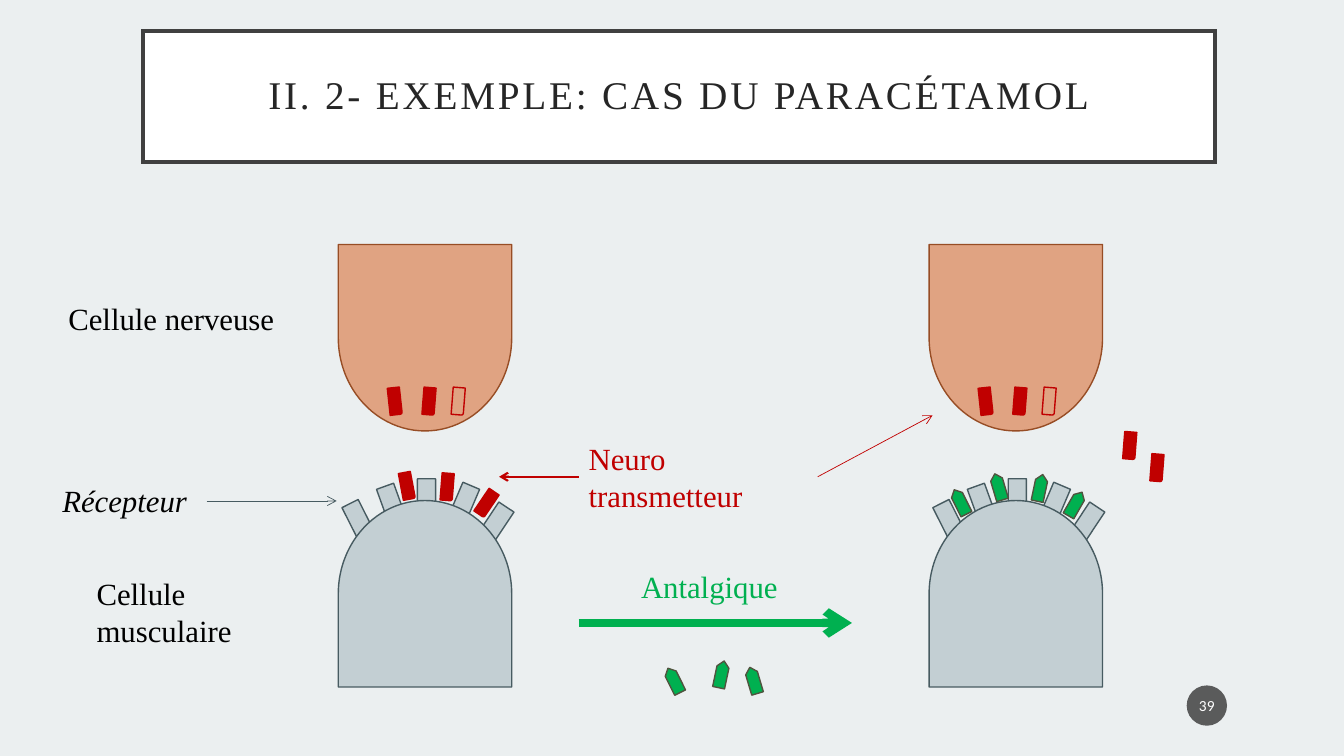
from dataclasses import dataclass

from lxml import etree
from pptx import Presentation
from pptx.dml.color import RGBColor
from pptx.enum.shapes import MSO_CONNECTOR, MSO_SHAPE
from pptx.enum.text import MSO_ANCHOR, MSO_AUTO_SIZE, PP_ALIGN
from pptx.oxml.ns import qn
from pptx.util import Inches, Pt

CELL = MSO_SHAPE.FLOWCHART_DELAY
PLATE = MSO_SHAPE.PENTAGON
ROUND = MSO_SHAPE.ROUND_1_RECTANGLE
ELLIPSE = MSO_SHAPE.OVAL
STRAIGHT = MSO_CONNECTOR.STRAIGHT
MIDDLE = MSO_ANCHOR.MIDDLE
CENTER = PP_ALIGN.CENTER
NO_FIT = MSO_AUTO_SIZE.NONE

COLORS = {
    "page": "EBEFF0", "white": "FFFFFF", "black": "000000",
    "frame": "404040", "title": "262626", "badge": "1D1D1D",
    "nerve": "E0A382", "nerve_edge": "974D25",
    "muscle": "C3CFD3", "muscle_edge": "475B61",
    "transmitter": "C00000", "drug": "00B050", "drug_edge": "50543F",
}
SERIF = "Times New Roman"


@dataclass(frozen=True)
class Style:
    preset: int
    width: float
    height: float
    fill: str | None
    edge: str


@dataclass(frozen=True)
class Spot:
    left: float
    top: float
    turn: float


@dataclass(frozen=True)
class Label:
    text: str
    left: float
    top: float
    width: float
    height: float
    color: str = "black"
    italic: bool = False


@dataclass(frozen=True)
class Arrow:
    start: tuple[float, float]
    end: tuple[float, float]
    color: str
    weight: float


NERVE = Style(CELL, 1.85, 1.72, "nerve", "nerve_edge")
MUSCLE = Style(CELL, 1.85, 1.72, "muscle", "muscle_edge")
RECEPTOR = Style(PLATE, 0.48, 0.18, "muscle", "muscle_edge")
TRANSMITTER = Style(ROUND, 0.27, 0.12, "transmitter", "transmitter")
EMPTY_SITE = Style(ROUND, 0.27, 0.12, None, "transmitter")
DRUG = Style(PLATE, 0.27, 0.12, "drug", "drug_edge")

# Parts shared by both synapses, placed for the left one
SYNAPSE = [
    (NERVE, [Spot(3.29, 2.49, 90)]),
    (RECEPTOR, [Spot(3.34, 5.12, 63.2), Spot(4.65, 5.14, 123.6), Spot(3.99, 4.9, 90),
                Spot(4.34, 4.95, 113.1), Spot(3.66, 4.96, 70.2)]),
    (MUSCLE, [Spot(3.29, 5.03, 270)]),
    (TRANSMITTER, [Spot(4.12, 3.92, 94.5), Spot(3.78, 3.92, 83.8)]),
    (EMPTY_SITE, [Spot(4.41, 3.92, 94.5)]),
]
SYNAPSE_SHIFTS = (0, 5.86)

# Molecules bound to receptors or floating free
MOLECULES = [
    (TRANSMITTER, [Spot(4.3, 4.77, 94.5), Spot(3.9, 4.76, 79.3), Spot(4.69, 4.93, 124.1),
                   Spot(11.07, 4.36, 94.5), Spot(11.34, 4.58, 94.5)]),
    (DRUG, [Spot(9.39, 4.92, 243.5), Spot(10.53, 4.94, 299.9), Spot(10.18, 4.78, 281.9),
            Spot(9.77, 4.77, 253.5), Spot(6.55, 6.69, 243.5), Spot(7.02, 6.63, 281.9),
            Spot(7.34, 6.69, 253.5)]),
]

LABELS = [
    Label("Cellule nerveuse", 0.58, 2.92, 2.37, 0.47),
    Label("Cellule musculaire", 0.86, 5.65, 2.37, 0.84),
    Label("Récepteur", 0.52, 4.73, 2.37, 0.47, italic=True),
    Label("Antalgique", 6.26, 5.58, 1.66, 0.47, "drug"),
]
NEURO = Label("Neuro transmetteur", 5.74, 4.31, 1.83, 0.84, "transmitter")

ARROWS = [
    Arrow((2.05, 4.97), (3.34, 4.97), "muscle_edge", 0.5),
    Arrow((8.11, 4.73), (9.25, 4.12), "transmitter", 0.5),
    Arrow((5.74, 6.18), (8.45, 6.18), "drug", 6),
]
NEURO_ARROW = Arrow((5.74, 4.73), (4.95, 4.73), "transmitter", 1.5)


def rgb(name: str) -> RGBColor:
    return RGBColor.from_string(COLORS[name])


def set_all(target, values: dict) -> None:
    for name, value in values.items():
        setattr(target, name, value)


def write(box, text: str, size: float, color: str, font: str = SERIF, italic: bool = False):
    """Put one formatted run in a box and return it."""
    span = box.text_frame.paragraphs[0].add_run()
    span.text = text
    set_all(span.font, {"name": font, "size": Pt(size), "italic": italic, "bold": False})
    span.font.color.rgb = rgb(color)
    return span


def draw_part(page, style: Style, spot: Spot, shift: float = 0) -> None:
    part = page.shapes.add_shape(style.preset, Inches(spot.left + shift), Inches(spot.top),
                                 Inches(style.width), Inches(style.height))
    part.rotation = spot.turn
    part.shadow.inherit = False
    if style.fill:
        part.fill.solid()
        part.fill.fore_color.rgb = rgb(style.fill)
    else:
        part.fill.background()
    part.line.color.rgb = rgb(style.edge)
    part.line.width = Pt(1)


def draw_label(page, label: Label):
    box = page.shapes.add_textbox(Inches(label.left), Inches(label.top),
                                  Inches(label.width), Inches(label.height))
    box.text_frame.word_wrap = True
    write(box, label.text, 22, label.color, italic=label.italic)
    return box


def draw_arrow(page, arrow: Arrow):
    line = page.shapes.add_connector(STRAIGHT, *map(Inches, arrow.start + arrow.end))
    line.line.color.rgb = rgb(arrow.color)
    line.line.width = Pt(arrow.weight)
    outline = line._element.spPr.find(qn("a:ln"))
    etree.SubElement(outline, qn("a:tailEnd"), type="arrow")
    etree.SubElement(line._element.spPr, qn("a:effectLst"))
    return line


def draw_title(page) -> None:
    title = page.shapes.title
    set_all(title, {"left": Inches(1.42), "top": Inches(0.31),
                    "width": Inches(10.63), "height": Inches(1.3)})
    title.fill.solid()
    title.fill.fore_color.rgb = rgb("white")
    title.line.color.rgb = rgb("frame")
    title.line.width = Pt(2.5)
    outline = title._element.spPr.find(qn("a:ln"))
    etree.SubElement(outline, qn("a:miter"), lim="800000")
    margins = {f"margin_{side}": Inches(0.2) for side in ("left", "top", "right", "bottom")}
    set_all(title.text_frame, margins | {"vertical_anchor": MIDDLE, "word_wrap": True,
                                         "auto_size": NO_FIT})
    set_all(title.text_frame.paragraphs[0], {"alignment": CENTER, "line_spacing": 0.9})
    span = write(title, "II. 2- EXEMPLE: CAS DU PARACÉTAMOL", 28, "title")
    span.font._element.set("spc", "200")


def draw_page_number(page) -> None:
    badge = page.shapes.add_shape(ELLIPSE, Inches(11.77), Inches(6.8), Inches(0.4), Inches(0.4))
    badge.shadow.inherit = False
    badge.fill.solid()
    badge.fill.fore_color.rgb = rgb("badge")
    tint = badge._element.spPr.find(".//" + qn("a:srgbClr"))
    etree.SubElement(tint, qn("a:alpha"), val="70000")
    badge.line.fill.background()
    set_all(badge.text_frame, {"margin_left": Inches(0.02), "margin_right": Inches(0.02),
                               "vertical_anchor": MIDDLE, "word_wrap": False})
    badge.text_frame.paragraphs[0].alignment = CENTER
    write(badge, "39", 11, "white", "Calibri")


def main() -> None:
    deck = Presentation()
    set_all(deck, {"slide_width": Inches(13.33), "slide_height": Inches(7.5)})
    page = deck.slides.add_slide(deck.slide_layouts[5])
    page.background.fill.solid()
    page.background.fill.fore_color.rgb = rgb("page")
    draw_title(page)
    # Synapses, then the molecules around them
    layers = [(parts, shift) for shift in SYNAPSE_SHIFTS for parts in SYNAPSE]
    layers += [(parts, 0) for parts in MOLECULES]
    for (style, spots), shift in layers:
        for spot in spots:
            draw_part(page, style, spot, shift)
    # Labels and arrows
    for label in LABELS:
        draw_label(page, label)
    for arrow in ARROWS:
        draw_arrow(page, arrow)
    neuro = draw_label(page, NEURO)
    draw_arrow(page, NEURO_ARROW).begin_connect(neuro, 1)
    draw_page_number(page)
    deck.save("out.pptx")


if __name__ == "__main__":
    main()
